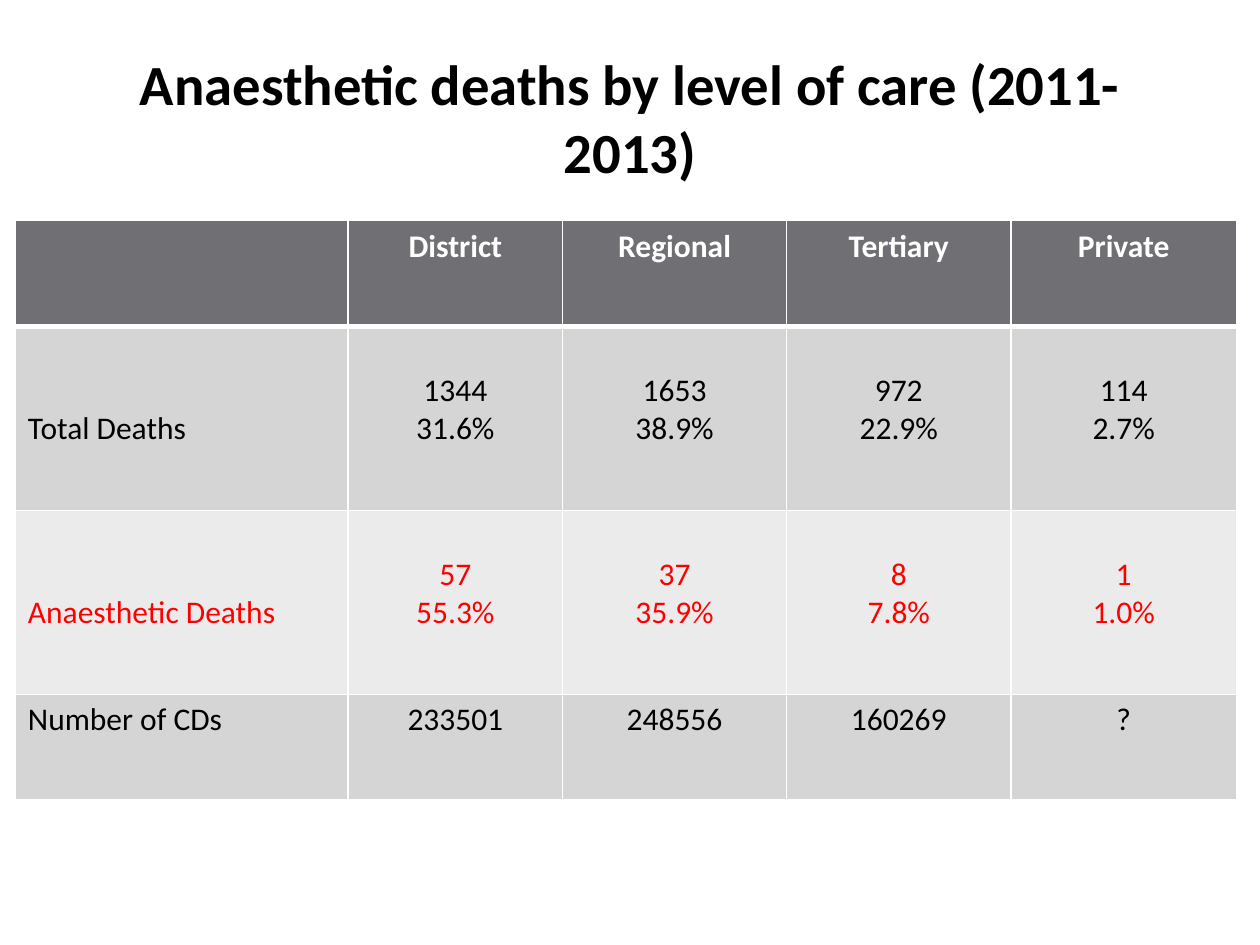
import pptx
import pptx.dml.color
import pptx.enum.text
import pptx.oxml
import pptx.oxml.ns
import pptx.util
from pptx.util import Cm

BLACK = pptx.dml.color.RGBColor(0x00, 0x00, 0x00)
WHITE = pptx.dml.color.RGBColor(0xFF, 0xFF, 0xFF)
RED = pptx.dml.color.RGBColor(0xFF, 0x00, 0x00)
HEADER_GREY = pptx.dml.color.RGBColor(0x6F, 0x6F, 0x74)
BAND_GREY = pptx.dml.color.RGBColor(0xD5, 0xD5, 0xD6)
LIGHT_GREY = pptx.dml.color.RGBColor(0xEB, 0xEB, 0xEB)

TITLE = "Anaesthetic deaths by level of care (2011-2013)"
COLUMN_WIDTHS = [6.71, 4.32, 4.52, 4.52, 4.55]
LINE_HEIGHT = 0.775
CELL_MARGIN = 0.13

# Each row: height in cm, lines the figures are lowered by, fill, font colour, texts
ROWS = [
    (2.13, 0, HEADER_GREY, WHITE,
     ["", "District", "Regional", "Tertiary", "Private"]),
    (3.71, 1, BAND_GREY, BLACK,
     ["Total Deaths", "1344\n31.6%", "1653\n38.9%", "972\n22.9%", "114\n2.7%"]),
    (3.71, 1, LIGHT_GREY, RED,
     ["Anaesthetic Deaths", "57\n55.3%", "37\n35.9%", "8\n7.8%", "1\n1.0%"]),
    (2.13, 0, BAND_GREY, BLACK,
     ["Number of CDs", "233501", "248556", "160269", "?"]),
]


class SlideBuilder:
    font = "Calibri"
    title_size = 32.4
    table_size = 18

    def __init__(self, slide):
        self.slide = slide

    def format_text(self, text_frame, size, color, bold, centered=True):
        alignment = pptx.enum.text.PP_ALIGN
        for paragraph in text_frame.paragraphs:
            paragraph.alignment = alignment.CENTER if centered else alignment.LEFT
            paragraph.font.size = pptx.util.Pt(size)
            for run in paragraph.runs:
                run.font.name = self.font
                run.font.size = pptx.util.Pt(size)
                run.font.bold = bold
                run.font.color.rgb = color

    def title(self, text, left, top, width, height):
        shape = self.slide.shapes.title
        shape.left, shape.top = Cm(left), Cm(top)
        shape.width, shape.height = Cm(width), Cm(height)
        shape.text_frame.text = text
        shape.text_frame.vertical_anchor = pptx.enum.text.MSO_ANCHOR.MIDDLE
        self.format_text(shape.text_frame, self.title_size, BLACK, True)

    def cell_borders(self, cell, top, bottom):
        properties = cell._tc.get_or_add_tcPr()
        for side, points in (("L", 1), ("R", 1), ("T", top), ("B", bottom)):
            properties.append(pptx.oxml.parse_xml(
                f'<a:ln{side} {pptx.oxml.ns.nsdecls("a")} w="{pptx.util.Pt(points)}">'
                f'<a:solidFill><a:srgbClr val="{WHITE}"/></a:solidFill></a:ln{side}>'))

    def table(self, left, top, widths, rows):
        height = sum(row[0] for row in rows)
        table = self.slide.shapes.add_table(
            len(rows), len(widths), Cm(left), Cm(top),
            Cm(sum(widths)), Cm(height)).table
        for column, width in zip(table.columns, widths):
            column.width = Cm(width)
        for row_index, (height, lowered, fill, color, texts) in enumerate(rows):
            table.rows[row_index].height = Cm(height)
            for column_index, text in enumerate(texts):
                cell = table.cell(row_index, column_index)
                is_label = column_index == 0
                # Labels line up with the second line of the figures
                lines_above = lowered * 2 if is_label else lowered
                cell.margin_top = Cm(CELL_MARGIN + lines_above * LINE_HEIGHT)
                cell.text_frame.text = text
                self.format_text(cell.text_frame, self.table_size, color,
                                 row_index == 0, not is_label)
                self.cell_borders(cell, top=3 if row_index == 1 else 1,
                                  bottom=3 if row_index == 0 else 1)
                cell.fill.solid()
                cell.fill.fore_color.rgb = fill


def main():
    presentation = pptx.Presentation()
    presentation.slide_width, presentation.slide_height = Cm(25.4), Cm(19.05)
    title_only = presentation.slide_layouts[5]
    builder = SlideBuilder(presentation.slides.add_slide(title_only))
    builder.table(0.31, 4.45, COLUMN_WIDTHS, ROWS)
    builder.title(TITLE, 1.27, 0.76, 22.86, 3.18)
    presentation.save("out.pptx")


if __name__ == "__main__":
    main()
